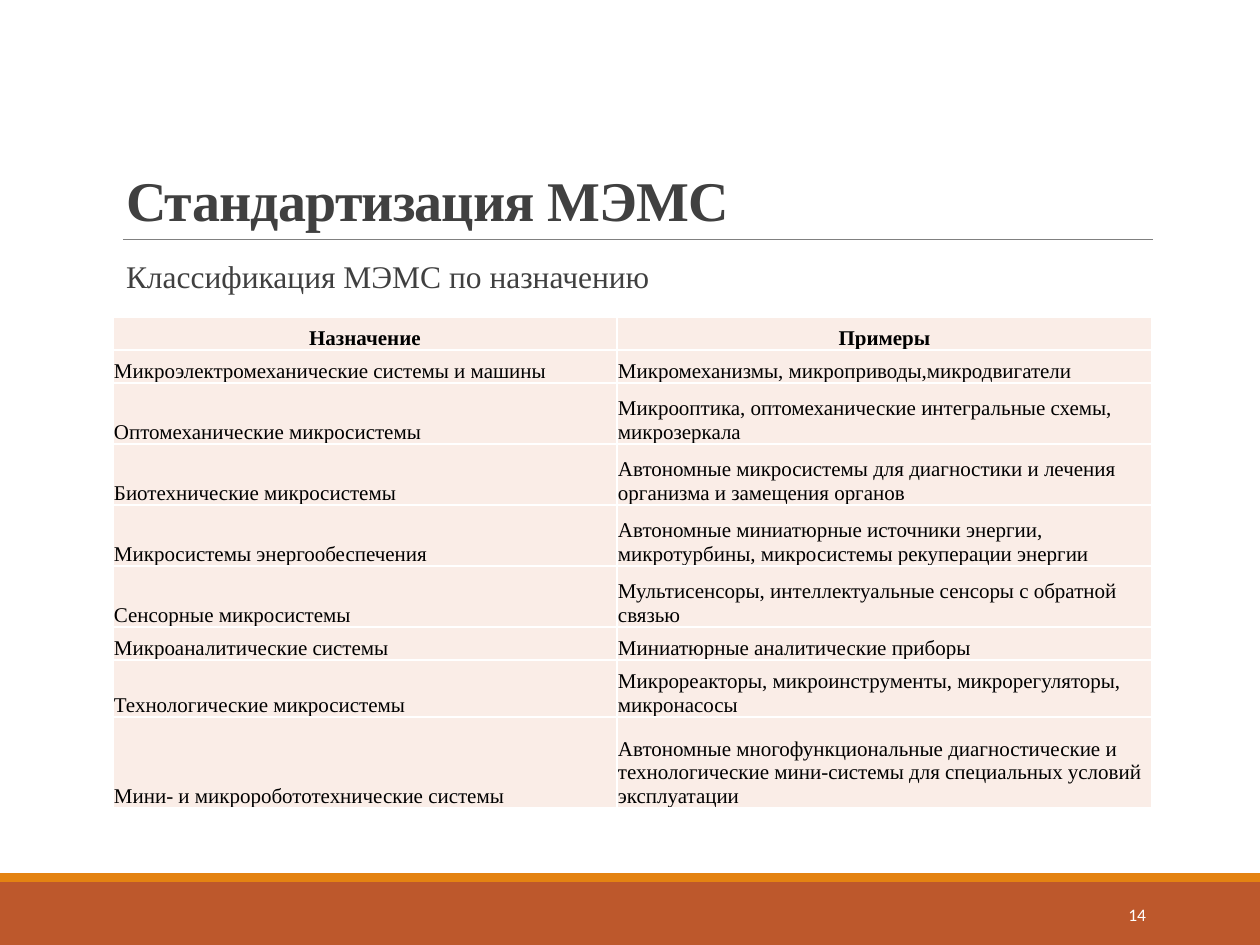
"""Build the slide that classifies MEMS by purpose."""
import dataclasses
import typing

import lxml.etree
import pptx
import pptx.dml.color
import pptx.enum.shapes
import pptx.enum.text
import pptx.oxml.ns
import pptx.util

PX = 914400 / 126
COLORS = {
    "rust": "BD582C", "orange": "E48312", "rule": "808080",
    "text": "404040", "black": "000000", "white": "FFFFFF", "cell": "FAEDE7",
}
SERIF = "Times New Roman"
ALIGN = pptx.enum.text.PP_ALIGN
ANCHOR = pptx.enum.text.MSO_ANCHOR
COLUMN_WIDTHS = (504, 535)
LEFT, WIDTH = 113, sum(COLUMN_WIDTHS)


@dataclasses.dataclass
class Box:
    left: int
    top: int
    width: int
    height: int

    def emu(self) -> list[int]:
        return [px(value) for value in dataclasses.astuple(self)]


@dataclasses.dataclass
class Style:
    size: int
    color: str
    font: str = SERIF
    bold: bool = False
    align: ALIGN = ALIGN.LEFT
    anchor: ANCHOR = ANCHOR.TOP
    line_spacing: float = 1.0


@dataclasses.dataclass
class Row:
    height: int
    purpose: str
    examples: str


BANDS = [(Box(0, 882, 1260, 63), "rust"), (Box(0, 873, 1260, 9), "orange")]
ROWS = [
    Row(33, "Назначение", "Примеры"),
    Row(33, "Микроэлектромеханические системы и машины",
        "Микромеханизмы, микроприводы,микродвигатели"),
    Row(61, "Оптомеханические микросистемы",
        "Микрооптика, оптомеханические интегральные схемы, микрозеркала"),
    Row(61, "Биотехнические микросистемы",
        "Автономные микросистемы для диагностики и лечения организма и замещения органов"),
    Row(61, "Микросистемы энергообеспечения",
        "Автономные миниатюрные источники энергии, микротурбины, "
        "микросистемы рекуперации энергии"),
    Row(61, "Сенсорные микросистемы",
        "Мультисенсоры, интеллектуальные сенсоры с обратной связью"),
    Row(33, "Микроаналитические системы", "Миниатюрные аналитические приборы"),
    Row(57, "Технологические микросистемы",
        "Микрореакторы, микроинструменты, микрорегуляторы, микронасосы"),
    Row(91, "Мини- и микроробототехнические системы",
        "Автономные многофункциональные диагностические и технологические "
        "мини-системы для специальных условий эксплуатации"),
]


def px(value: int) -> int:
    return round(value * PX)


def rgb(name: str) -> pptx.dml.color.RGBColor:
    return pptx.dml.color.RGBColor.from_string(COLORS[name])


def assign(target: typing.Any, values: dict[str, typing.Any]) -> None:
    for name, value in values.items():
        setattr(target, name, value)


def write(frame: typing.Any, text: str, style: Style) -> typing.Any:
    para = frame.paragraphs[0]
    assign(para, {"alignment": style.align, "line_spacing": style.line_spacing})
    span = para.add_run()
    span.text = text
    assign(span.font, {"name": style.font, "size": pptx.util.Pt(style.size), "bold": style.bold})
    span.font.color.rgb = rgb(style.color)
    return span


def write_box(shape: typing.Any, text: str, style: Style) -> typing.Any:
    frame = shape.text_frame
    assign(frame, {
        "word_wrap": True, "auto_size": pptx.enum.text.MSO_AUTO_SIZE.NONE,
        "vertical_anchor": style.anchor,
        "margin_left": px(13), "margin_right": px(13), "margin_top": px(6), "margin_bottom": px(6),
    })
    return write(frame, text, style)


def add_band(page: typing.Any, box: Box, color: str) -> None:
    band = page.shapes.add_shape(pptx.enum.shapes.MSO_SHAPE.RECTANGLE, *box.emu())
    band.shadow.inherit = False
    band.fill.solid()
    band.fill.fore_color.rgb = rgb(color)
    band.line.fill.background()


def add_rule(page: typing.Any, left: int, right: int, y: int) -> None:
    rule = page.shapes.add_connector(
        pptx.enum.shapes.MSO_CONNECTOR.STRAIGHT, px(left), px(y), px(right), px(y))
    rule.line.color.rgb = rgb("rule")
    rule.line.width = pptx.util.Pt(0.5)
    lxml.etree.SubElement(rule._element.spPr, pptx.oxml.ns.qn("a:effectLst"))


def format_cell(cell: typing.Any) -> None:
    assign(cell, {
        "vertical_anchor": ANCHOR.BOTTOM, "margin_left": px(1), "margin_right": px(1),
        "margin_top": px(1), "margin_bottom": 0,
    })
    properties = cell._tc.get_or_add_tcPr()
    for side in ("lnL", "lnR", "lnT", "lnB"):
        border = lxml.etree.SubElement(properties, pptx.oxml.ns.qn(f"a:{side}"), w="12700")
        fill = lxml.etree.SubElement(border, pptx.oxml.ns.qn("a:solidFill"))
        lxml.etree.SubElement(fill, pptx.oxml.ns.qn("a:srgbClr"), val=COLORS["white"])
    cell.fill.solid()
    cell.fill.fore_color.rgb = rgb("cell")


def add_purposes(page: typing.Any, top: int) -> None:
    box = Box(LEFT, top, WIDTH, sum(row.height for row in ROWS))
    table = page.shapes.add_table(len(ROWS), len(COLUMN_WIDTHS), *box.emu()).table
    assign(table, {"horz_banding": False})
    for column, width in zip(table.columns, COLUMN_WIDTHS):
        column.width = px(width)
    header = Style(12, "black", bold=True, align=ALIGN.CENTER)
    body = Style(12, "black")
    for index, row in enumerate(ROWS):
        table.rows[index].height = px(row.height)
        for cell, text in zip(table.rows[index].cells, (row.purpose, row.examples)):
            format_cell(cell)
            write(cell.text_frame, text, body if index else header)


def main() -> None:
    deck = pptx.Presentation()
    assign(deck, {"slide_width": px(1260), "slide_height": px(945)})
    page = deck.slides.add_slide(deck.slide_layouts[5])
    for box, color in BANDS:
        add_band(page, box, color)
    add_rule(page, 123, 1153, 239)

    title = page.shapes.title
    assign(title, dict(zip(("left", "top", "width", "height"), Box(LEFT, 39, WIDTH, 200).emu())))
    span = write_box(title, "Стандартизация МЭМС", Style(
        32, "text", bold=True, anchor=ANCHOR.BOTTOM, line_spacing=0.85))
    span.font._element.set("spc", "-50")

    subtitle = page.shapes.add_textbox(*Box(LEFT, 255, WIDTH, 50).emu())
    write_box(subtitle, "Классификация МЭМС по назначению", Style(18, "text", line_spacing=0.9))
    number = page.shapes.add_textbox(*Box(1023, 890, 136, 50).emu())
    write_box(number, "14", Style(
        10, "white", font="Calibri", align=ALIGN.RIGHT, anchor=ANCHOR.MIDDLE))
    add_purposes(page, 317)
    deck.save("out.pptx")


if __name__ == "__main__":
    main()
